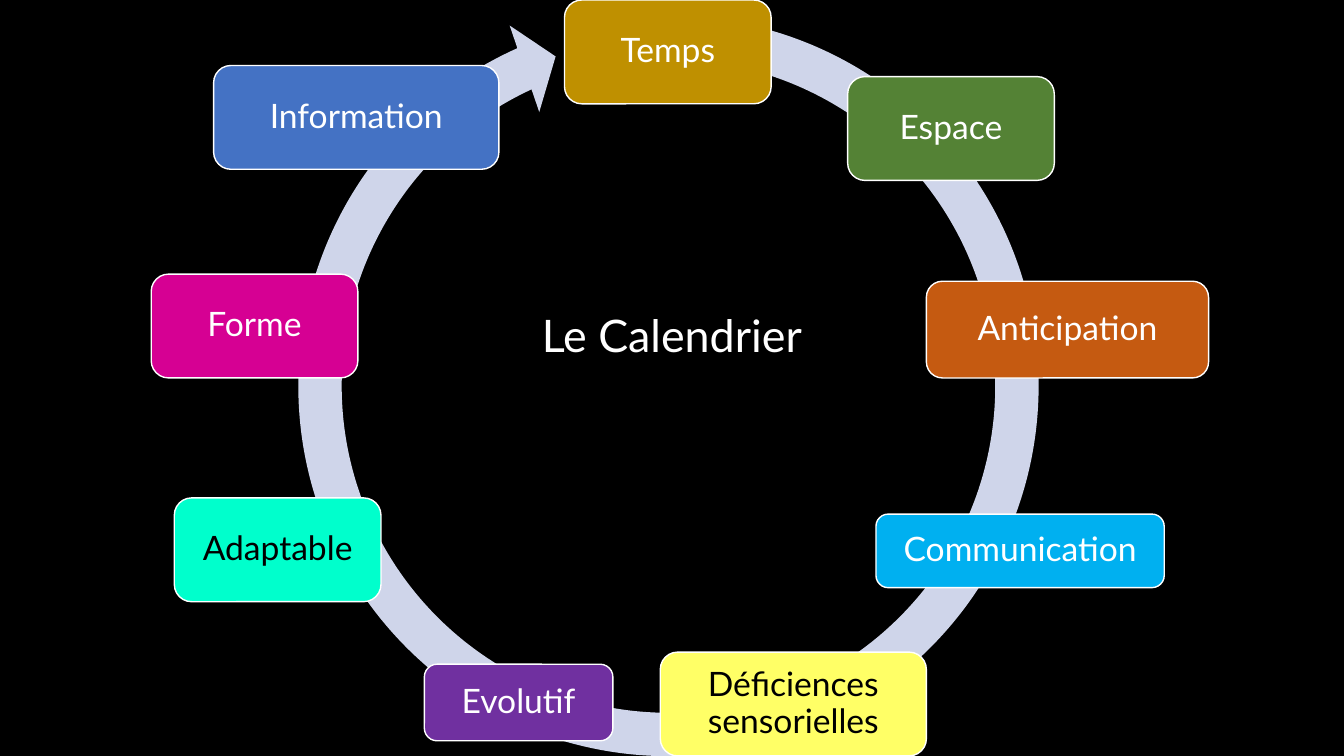
from dataclasses import dataclass

from pptx import Presentation
from pptx.dml.color import RGBColor
from pptx.enum.shapes import MSO_SHAPE
from pptx.enum.text import MSO_ANCHOR, PP_ALIGN
from pptx.util import Inches, Pt


@dataclass(frozen=True)
class Theme:
    font: str = "Lato"
    title_size: int = 32
    label_size: int = 24
    background: str = "000000"
    light: str = "FFFFFF"
    dark: str = "000000"
    ring: str = "CFD5EA"


THEME = Theme()
SLIDE_WIDTH, SLIDE_HEIGHT = Inches(13.33), Inches(7.5)

# Box sizes, in percent of the slide's width and height
STANDARD = (15.38, 13.73)

# Label, centre (percent of the slide), size, fill, text colour
THEMES_OF_CALENDAR = [
    ("Temps", (49.69, 6.87), STANDARD, "BF9000", THEME.light),
    ("Espace", (70.76, 17), STANDARD, "548235", THEME.light),
    ("Anticipation", (79.43, 43.6), (21, 12.8), "C55A11", THEME.light),
    ("Communication", (75.9, 72.87), (21.45, 9.73), "00B0F0", THEME.light),
    ("Déficiences sensorielles", (59.03, 93.13), (19.8, 13.73), "FFFF66", THEME.dark),
    ("Evolutif", (38.59, 92.93), (14.03, 10.13), "7030A0", THEME.light),
    ("Adaptable", (20.66, 72.73), STANDARD, "00FFCC", THEME.dark),
    ("Forme", (18.94, 43.13), STANDARD, "D60093", THEME.light),
    ("Information", (26.51, 15.53), (21.23, 13.73), "4472C4", THEME.light),
]


def place(centre, size):
    """Turn a centre and a size in percent into left, top, width, height."""
    (x, y), (width, height) = centre, size
    return (
        round(SLIDE_WIDTH * (x - width / 2) / 100),
        round(SLIDE_HEIGHT * (y - height / 2) / 100),
        round(SLIDE_WIDTH * width / 100),
        round(SLIDE_HEIGHT * height / 100),
    )


def write(shape, text, size, color):
    frame = shape.text_frame
    frame.word_wrap = True
    paragraph = frame.paragraphs[0]
    paragraph.text = text
    paragraph.alignment = PP_ALIGN.CENTER
    paragraph.font.name = THEME.font
    paragraph.font.size = Pt(size)
    paragraph.font.color.rgb = RGBColor.from_string(color)
    return frame


def add_filled(slide, kind, centre, size, fill):
    shape = slide.shapes.add_shape(kind, *place(centre, size))
    shape.shadow.inherit = False
    shape.fill.solid()
    shape.fill.fore_color.rgb = RGBColor.from_string(fill)
    return shape


def add_title(slide, text, centre, size):
    box = slide.shapes.add_textbox(*place(centre, size))
    write(box, text, THEME.title_size, THEME.light)


def add_ring(slide, centre, size):
    ring = add_filled(slide, MSO_SHAPE.CIRCULAR_ARROW, centre, size, THEME.ring)
    ring.line.fill.background()
    # Thickness, head angle, end angle, start angle, head width
    for index, value in enumerate((0.055, 3.307, 147.356, 168.254, 0.058)):
        ring.adjustments[index] = value


def add_label(slide, text, centre, size, fill, color):
    box = add_filled(slide, MSO_SHAPE.ROUNDED_RECTANGLE, centre, size, fill)
    box.line.color.rgb = RGBColor.from_string(THEME.light)
    box.line.width = Pt(1)
    frame = write(box, text, THEME.label_size, color)
    frame.vertical_anchor = MSO_ANCHOR.MIDDLE
    frame.margin_left = frame.margin_right = Inches(0.1)
    frame.margin_top = frame.margin_bottom = Inches(0.1)
    frame.paragraphs[0].line_spacing = 0.9


def main():
    presentation = Presentation()
    presentation.slide_width, presentation.slide_height = SLIDE_WIDTH, SLIDE_HEIGHT
    slide = presentation.slides.add_slide(presentation.slide_layouts[6])

    # Background
    background = slide.background.fill
    background.solid()
    background.fore_color.rgb = RGBColor.from_string(THEME.background)

    # Title, cycle arrow and the labels around it
    add_title(slide, "Le Calendrier", (50, 44.27), (31.58, 8.53))
    add_ring(slide, (49.74, 51.07), (58.66, 104.27))
    for label in THEMES_OF_CALENDAR:
        add_label(slide, *label)

    presentation.save("out.pptx")


if __name__ == "__main__":
    main()
